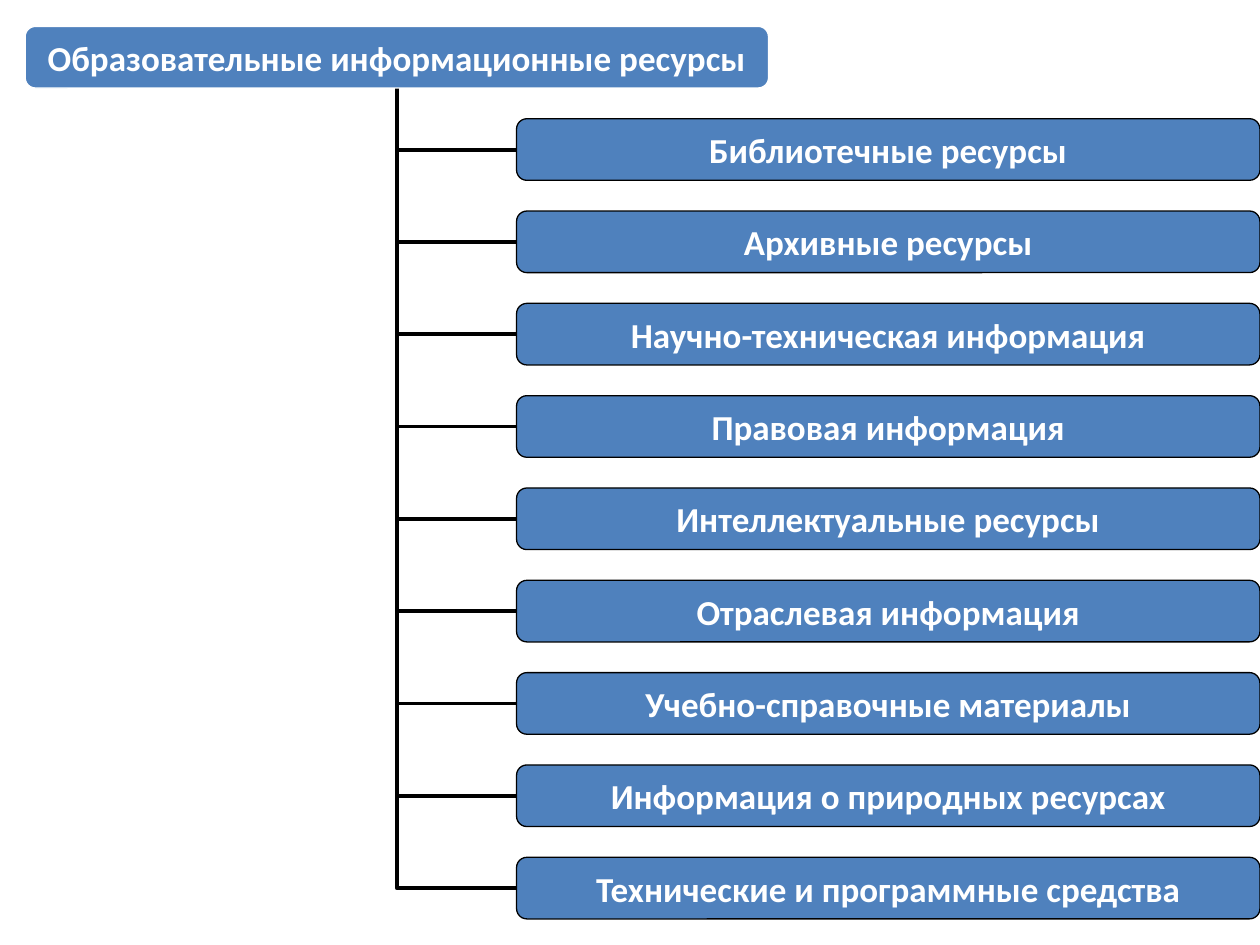
import pptx
import pptx.dml.color
import pptx.enum.shapes
import pptx.enum.text
import pptx.oxml
import pptx.oxml.ns
import pptx.util

Pt = pptx.util.Pt

ROOT = "Образовательные информационные ресурсы"
RESOURCES = [
    "Библиотечные ресурсы",
    "Архивные ресурсы",
    "Научно-техническая информация",
    "Правовая информация",
    "Интеллектуальные ресурсы",
    "Отраслевая информация",
    "Учебно-справочные материалы",
    "Информация о природных ресурсах",
    "Технические и программные средства",
]


def color(value):
    """Return the RGB colour for a hex string."""
    return pptx.dml.color.RGBColor.from_string(value)


def add_node(slide, label, left, top, width, height, outline):
    """Add one rounded, labelled node of the hierarchy."""
    node = slide.shapes.add_shape(
        pptx.enum.shapes.MSO_SHAPE.ROUNDED_RECTANGLE,
        Pt(left), Pt(top), Pt(width), Pt(height))
    node.shadow.inherit = False
    node.fill.solid()
    node.fill.fore_color.rgb = color("4F81BD")
    node.line.color.rgb = color(outline)
    node.line.width = Pt(0.75)
    frame = node.text_frame
    frame.margin_left = frame.margin_right = 0
    frame.margin_top = frame.margin_bottom = 0
    frame.word_wrap = False
    frame.vertical_anchor = pptx.enum.text.MSO_ANCHOR.MIDDLE
    paragraph = frame.paragraphs[0]
    paragraph.text = label
    paragraph.alignment = pptx.enum.text.PP_ALIGN.CENTER
    paragraph.font.name = "Calibri"
    paragraph.font.size = Pt(20)
    paragraph.font.bold = True
    paragraph.font.color.rgb = color("FFFFFF")


def add_branch(slide, trunk_x, trunk_y, node_x, node_y):
    """Add an elbow that runs left from a node and up to the root."""
    branch = slide.shapes.add_connector(
        pptx.enum.shapes.MSO_CONNECTOR.ELBOW,
        Pt(trunk_x), Pt(trunk_y), Pt(node_x), Pt(node_y))
    branch.line.color.rgb = color("000000")
    branch.line.width = Pt(2.25)
    properties = branch.element.spPr
    properties.find(pptx.oxml.ns.qn("a:xfrm")).set("rot", "10800000")
    properties.find(pptx.oxml.ns.qn("a:prstGeom")).set("prst", "bentConnector2")
    properties.append(pptx.oxml.parse_xml(
        f"<a:effectLst {pptx.oxml.ns.nsdecls('a')}/>"))


def add_hierarchy(slide, left, top, width, height):
    """Add the root, its resources in a right-hand column and the branches."""
    node_width, node_height = 424.8, 35.2
    pitch = (height - node_height) / len(RESOURCES)
    resource_left = left + width - node_width
    tops = [top + pitch * row for row in range(1, len(RESOURCES) + 1)]
    for resource_top in reversed(tops):
        add_branch(slide, left + node_width / 2, top + node_height,
                   resource_left, resource_top + node_height / 2)
    add_node(slide, ROOT, left, top, node_width, node_height, "FFFFFF")
    for resource, resource_top in zip(RESOURCES, tops):
        add_node(slide, resource, resource_left, resource_top,
                 node_width, node_height, "000000")


def main():
    """Build and save the presentation."""
    presentation = pptx.Presentation()
    presentation.slide_width = Pt(720)
    presentation.slide_height = Pt(540)
    slide = presentation.slides.add_slide(presentation.slide_layouts[6])
    add_hierarchy(slide, 14.4, 15.1, 705.6, 510)
    presentation.save("out.pptx")


if __name__ == "__main__":
    main()
